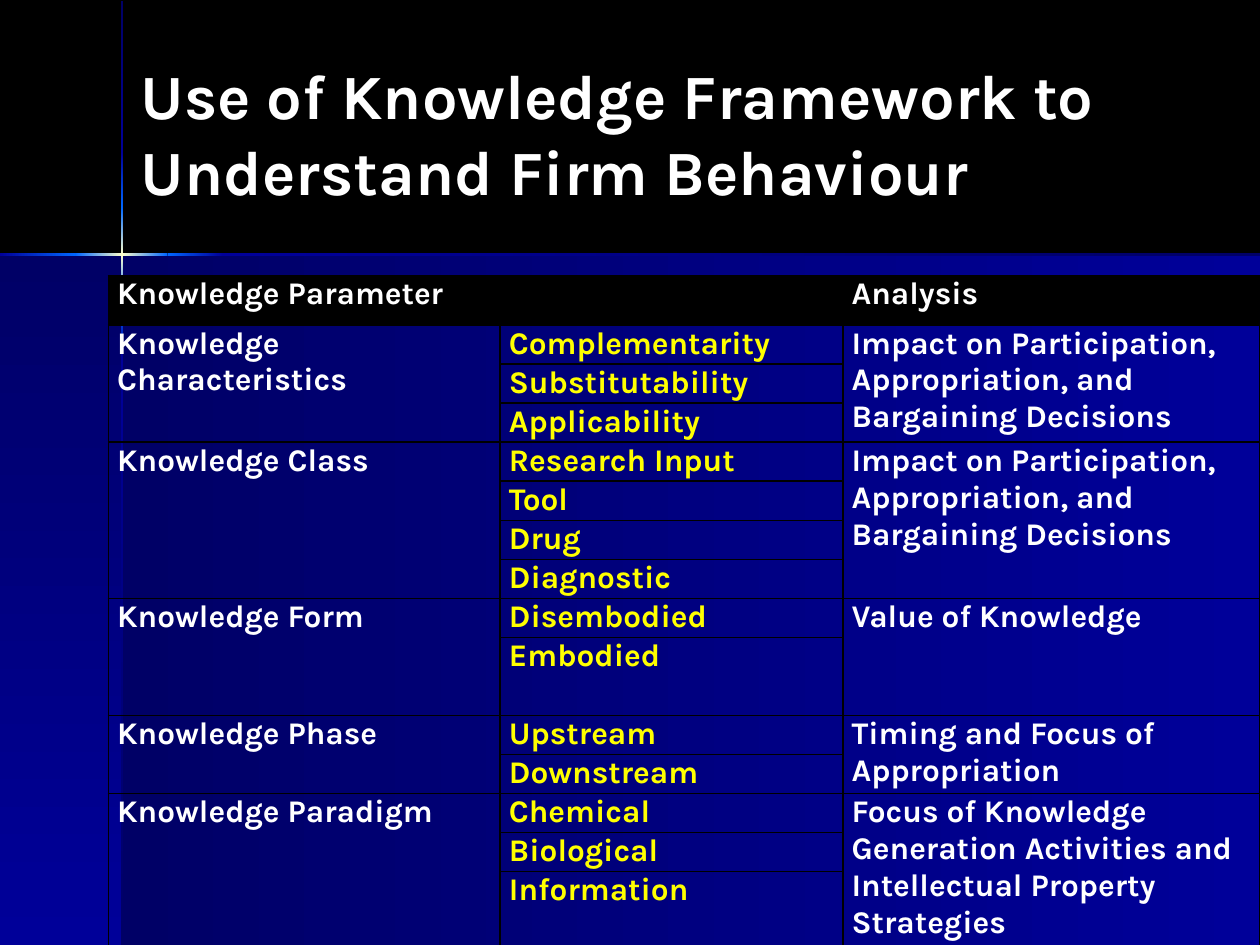
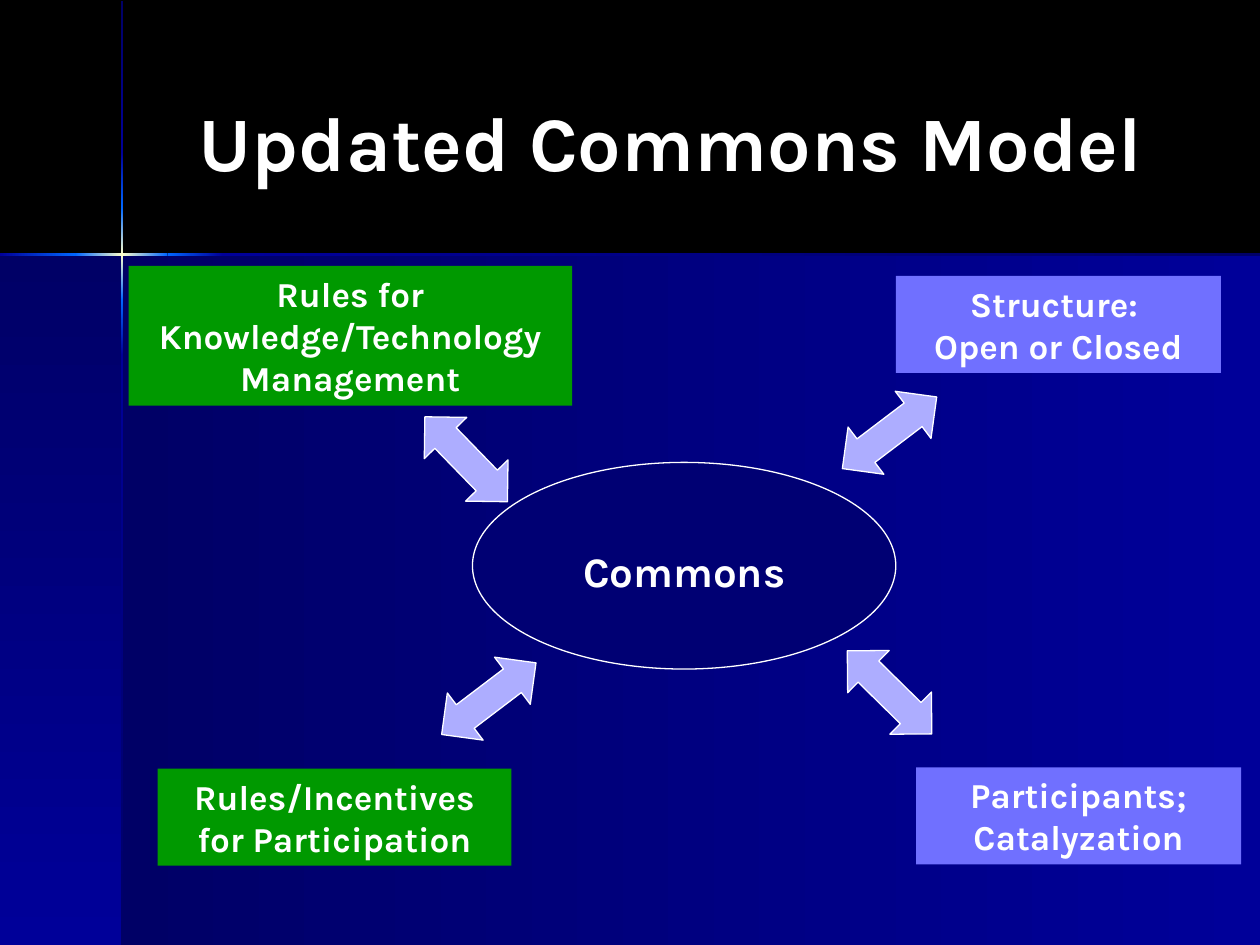
"""Build two slides: the knowledge framework table and the updated commons model."""
from lxml.etree import SubElement
from pptx import Presentation
from pptx.dml.color import RGBColor
from pptx.enum.shapes import MSO_SHAPE
from pptx.enum.text import MSO_ANCHOR, PP_ALIGN
from pptx.oxml.ns import qn
from pptx.util import Inches, Pt

FONT = "Karla"
BLACK, WHITE, YELLOW = "000000", "FFFFFF", "FFFF00"
NAVY, BLUE, BRIGHT, CREAM = "000066", "000099", "0066FF", "FFFFCC"
GREEN, VIOLET, LILAC, ELLIPSE_BLUE = "009900", "7070FF", "ADADFF", "000073"
BORDER_WIDTH = Pt(1)

color = RGBColor.from_string


def add_block(page, kind, place, colors, angle=0, line=None):
    """Add a preset shape with a plain fill or a gradient of two colours."""
    block = page.shapes.add_shape(kind, *map(Inches, place))
    block.shadow.inherit = False
    if len(colors) == 1:
        block.fill.solid()
        block.fill.fore_color.rgb = color(colors[0])
    else:
        block.fill.gradient()
        block.fill.gradient_angle = angle
        for stop, stop_color in zip(block.fill.gradient_stops, colors):
            stop.color.rgb = color(stop_color)
    if line:
        block.line.color.rgb = color(line)
        block.line.width = Pt(0.75)
    else:
        block.line.fill.background()
    return block


def write(frame, lines, size, text_color=WHITE, align=PP_ALIGN.LEFT):
    """Write bold lines into a text frame, one paragraph each."""
    frame.word_wrap = True
    for number, line in enumerate(lines):
        para = frame.add_paragraph() if number else frame.paragraphs[0]
        para.alignment = align
        span = para.add_run()
        span.text = line
        span.font.name = FONT
        span.font.size = Pt(size)
        span.font.bold = True
        span.font.color.rgb = color(text_color)


deck = Presentation()
deck.slide_width, deck.slide_height = Inches(10), Inches(7.5)

vertical_glow = [(0.01, NAVY), (1.21, BLUE), (1.65, BRIGHT), (2.02, CREAM),
                 (2.38, BRIGHT), (2.82, BLUE), (7.5, NAVY)]
horizontal_glow = [(0, BLUE), (0.6, BRIGHT), (0.97, CREAM),
                   (1.33, BRIGHT), (1.77, BLUE), (10, NAVY)]
titles = [
    ("Use of Knowledge Framework to Understand Firm Behaviour", 36, (1.02, 0.31, 7.97, 1.48)),
    ("Updated Commons Model", 44, (1.48, 0.33, 7.93, 1.57)),
]
for title, size, place in titles:
    page = deck.slides.add_slide(deck.slide_layouts[6])
    page.background.fill.solid()
    page.background.fill.fore_color.rgb = color(BLACK)
    add_block(page, MSO_SHAPE.RECTANGLE, (0.97, 2.02, 9.03, 5.48), (NAVY, BLUE))
    add_block(page, MSO_SHAPE.RECTANGLE, (0, 2.02, 0.97, 5.48), (NAVY, BLUE), 270)
    for (top, first), (bottom, last) in zip(vertical_glow, vertical_glow[1:]):
        add_block(page, MSO_SHAPE.RECTANGLE, (0.96, top, 0.02, bottom - top), (first, last), 270)
    for (left, first), (right, last) in zip(horizontal_glow, horizontal_glow[1:]):
        add_block(page, MSO_SHAPE.RECTANGLE, (left, 2.01, right - left, 0.02), (first, last))
    box = page.shapes.add_textbox(*map(Inches, place))
    box.text_frame.vertical_anchor = MSO_ANCHOR.MIDDLE
    write(box.text_frame, [title], size)

table_page, model_page = deck.slides

decisions = "Impact on Participation, Appropriation, and Bargaining Decisions"
groups = [
    ("Knowledge Characteristics", ["Complementarity", "Substitutability", "Applicability"],
     decisions),
    ("Knowledge Class", ["Research Input", "Tool", "Drug", "Diagnostic"], decisions),
    ("Knowledge Form", ["Disembodied", "Embodied"], "Value of Knowledge"),
    ("Knowledge Phase", ["Upstream", "Downstream"], "Timing and Focus of Appropriation"),
    ("Knowledge Paradigm", ["Chemical", "Biological", "Information"],
     "Focus of Knowledge Generation Activities and Intellectual Property Strategies"),
]
tall_rows = {"Embodied", "Information"}
row_count = 1 + sum(len(values) for _, values, _ in groups)

frame = table_page.shapes.add_table(
    row_count, 3, Inches(0.86), Inches(2.19), Inches(9.14), Inches(5.31))
table = frame.table
table.first_row = table.horz_banding = False
for column, width in zip(table.columns, (3.11, 2.72, 3.31)):
    column.width = Inches(width)

for row_number, row in enumerate(table.rows):
    row.height = Inches(0.31 if row_number else 0.39)
    for cell in row.cells:
        cell.margin_left = cell.margin_right = Inches(0.07)
        cell.margin_top = cell.margin_bottom = 0
        properties = cell._tc.get_or_add_tcPr()
        for side in ("a:lnL", "a:lnR", "a:lnT", "a:lnB"):
            border = SubElement(properties, qn(side), w=str(BORDER_WIDTH))
            SubElement(SubElement(border, qn("a:solidFill")), qn("a:srgbClr"), val=BLACK)
        if row_number:
            cell.fill.background()
        else:
            cell.fill.solid()
            cell.fill.fore_color.rgb = color(BLACK)

write(table.cell(0, 0).text_frame, ["Knowledge Parameter"], 18)
write(table.cell(0, 2).text_frame, ["Analysis"], 18)
first_row = 1
for parameter, values, analysis in groups:
    last_row = first_row + len(values) - 1
    for column_number, text in ((0, parameter), (2, analysis)):
        cell = table.cell(first_row, column_number)
        cell.merge(table.cell(last_row, column_number))
        write(cell.text_frame, [text], 18)
    for row_number, value in enumerate(values, first_row):
        write(table.cell(row_number, 1).text_frame, [value], 18, YELLOW)
        if value in tall_rows:
            table.rows[row_number].height = Inches(0.62)
    first_row = last_row + 1

add_block(model_page, MSO_SHAPE.OVAL, (3.75, 3.67, 3.36, 1.64), [ELLIPSE_BLUE], line=WHITE)
arrows = [(6.59, 3.2, 322.8), (3.41, 5.31, 322.8), (6.59, 5.26, 44.5), (3.23, 3.41, 225.8)]
for left, top, rotation in arrows:
    arrow = add_block(model_page, MSO_SHAPE.LEFT_RIGHT_ARROW, (left, top, 0.94, 0.47),
                      [LILAC], line=WHITE)
    arrow.rotation = rotation

commons = model_page.shapes.add_textbox(*map(Inches, (4.14, 4.28, 2.58, 0.51)))
write(commons.text_frame, ["Commons"], 24, align=PP_ALIGN.CENTER)

factors = [
    (["Structure: ", "Open or Closed"], VIOLET, (7.11, 2.19, 2.58, 0.77)),
    (["Participants; Catalyzation"], VIOLET, (7.27, 6.09, 2.58, 0.77)),
    (["Rules/Incentives for Participation"], GREEN, (1.25, 6.1, 2.81, 0.77)),
    (["Rules for Knowledge/Technology Management"], GREEN, (1.02, 2.11, 3.52, 1.11)),
]
for lines, fill, place in factors:
    factor = add_block(model_page, MSO_SHAPE.RECTANGLE, place, [fill])
    write(factor.text_frame, lines, 20, align=PP_ALIGN.CENTER)

deck.save("out.pptx")
